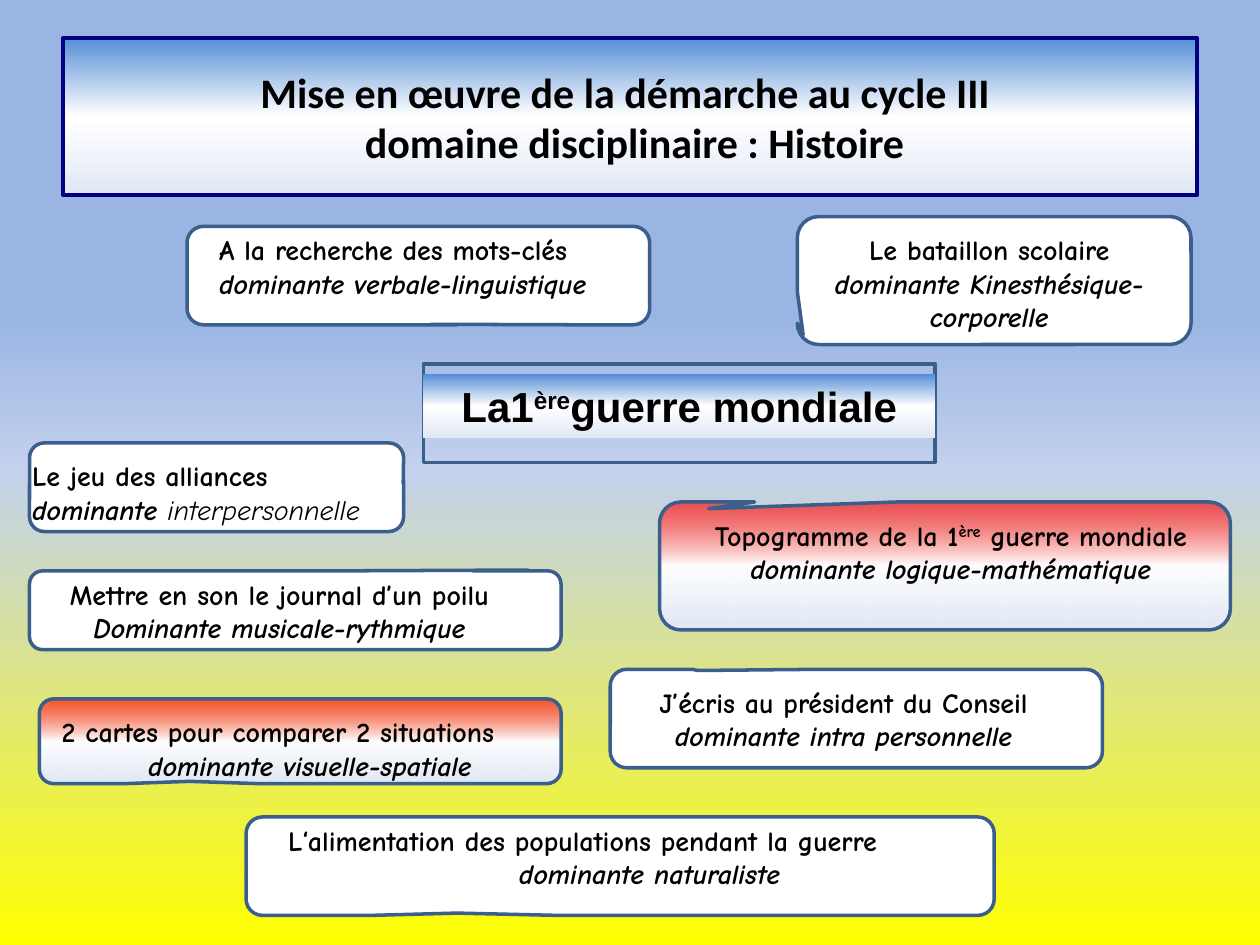
from lxml.etree import SubElement
from pptx import Presentation
from pptx.dml.color import RGBColor
from pptx.enum.shapes import MSO_SHAPE
from pptx.enum.text import MSO_ANCHOR, MSO_AUTO_SIZE, PP_ALIGN
from pptx.oxml.ns import qn
from pptx.util import Inches, Pt

THEME = {
    "ink": "000000", "paper": "FFFFFF", "outline": "3A5F8C", "title_outline": "000080",
    "sky": [(33, "9AB5E4", 100), (50, "C2D1ED", 100), (100, "FFFF00", 100)],
    "blue": [(0, "558ED5", 100), (50, "FFFFFF", 100), (100, "E1E8F5", 100)],
    "red": [(0, "FF0000", 62), (50, "FFFFFF", 100), (100, "E1E8F5", 100)],
    "title_font": "Calibri", "topic_font": "Arial", "activity_font": "Comic Neue",
    "heading_size": 24, "activity_size": 16,
}
ALIGN = {"l": PP_ALIGN.LEFT, "c": PP_ALIGN.CENTER}
ITALIC, LIGHT, SUPER = {"italic": True}, {"italic": True, "bold": False}, {"raised": True}


def shade(fill, owner, stops):
    """Give owner a top-to-bottom gradient of (percent, colour, opacity) stops."""
    fill.gradient()
    fill.gradient_angle = 270
    stop_list = owner.element.find(".//" + qn("a:gsLst"))
    for old_stop in list(stop_list):
        stop_list.remove(old_stop)
    for percent, colour, opacity in stops:
        stop = SubElement(stop_list, qn("a:gs"), pos=str(percent * 1000))
        tint = SubElement(stop, qn("a:srgbClr"), val=colour)
        if opacity < 100:
            SubElement(tint, qn("a:alpha"), val=str(opacity * 1000))


def write(frame, lines, *, font, size, aligns="c", wrap=True):
    """Fill frame with lines of (text, format) runs; aligns has a letter per line."""
    frame.word_wrap = wrap
    for index, line in enumerate(lines):
        paragraph = frame.add_paragraph() if index else frame.paragraphs[0]
        paragraph.alignment = ALIGN[aligns[min(index, len(aligns) - 1)]]
        for text, style in line:
            for part_index, part in enumerate(text.split("\n")):
                if part_index:
                    paragraph.add_line_break()
                run = paragraph.add_run()
                run.text = part
                run.font.name, run.font.size = font, Pt(size)
                run.font.bold = style.get("bold", True)
                run.font.italic = style.get("italic", False)
                run.font.color.rgb = RGBColor.from_string(THEME["ink"])
                if style.get("raised"):
                    run.font._element.set("baseline", "30000")


prs = Presentation()
prs.slide_width, prs.slide_height = Inches(10), Inches(7.5)
unit = prs.slide_width / 128  # the slide is a grid of 128 columns by 96 rows
slide = prs.slides.add_slide(prs.slide_layouts[5])
shade(slide.background.fill, slide, THEME["sky"])

# Title band
title = slide.shapes.title
title.left, title.top = int(prs.slide_width * 0.05), int(prs.slide_height * 0.04)
title.width, title.height = int(prs.slide_width * 0.9), int(prs.slide_height / 6)
shade(title.fill, title, THEME["blue"])
title.line.color.rgb = RGBColor.from_string(THEME["title_outline"])
title.line.width = Pt(2.25)
title.text_frame.vertical_anchor = MSO_ANCHOR.MIDDLE
write(title.text_frame, [[("Mise en œuvre de la démarche au cycle III \n domaine disciplinaire : Histoire", {})]],
      font=THEME["title_font"], size=THEME["heading_size"])

# Panels: grid cell, fill, callout tip (None for a plain rectangle)
panels = [
    ((3, 58, 54, 8), "paper", (0.438, -0.511)),
    ((43, 37, 52, 10), None, None),
    ((43, 38, 52, 6.5), "blue", None),
    ((19, 23, 47, 10), "paper", (0.027, 0.495)),
    ((81, 22, 40, 13), "paper", (-0.485, 0.425)),
    ((67, 51, 58, 13), "red", (-0.414, -0.448)),
    ((3, 45, 38, 9), "paper", (0.499, -0.04)),
    ((62, 68, 50, 10), "paper", (-0.322, -0.488)),
    ((4, 71, 53, 8.6), "red", (-0.212, 0.474)),
    ((25, 83, 76, 10), "paper", (-0.218, 0.477)),
]
for cell, fill_name, tip in panels:
    kind = MSO_SHAPE.ROUNDED_RECTANGULAR_CALLOUT if tip else MSO_SHAPE.RECTANGLE
    panel = slide.shapes.add_shape(kind, *(int(n * unit) for n in cell))
    panel.shadow.inherit = False
    if tip:
        panel.adjustments[0], panel.adjustments[1] = tip
    if fill_name is None:
        panel.fill.background()
    elif fill_name == "paper":
        panel.fill.solid()
        panel.fill.fore_color.rgb = RGBColor.from_string(THEME["paper"])
    else:
        shade(panel.fill, panel, THEME[fill_name])
    if fill_name == "blue":
        panel.line.fill.background()
        panel.text_frame.vertical_anchor = MSO_ANCHOR.TOP
        write(panel.text_frame, [[("La1", {}), ("ère", SUPER), ("guerre mondiale", {})]],
              font=THEME["topic_font"], size=THEME["heading_size"])
    else:
        panel.line.color.rgb = RGBColor.from_string(THEME["outline"])
        panel.line.width = Pt(2)

# Activities: grid cell, alignment of each line, wrapping, lines
activities = [
    ((21, 23, 44.5, 12), "l", True,
     [[("A la recherche des mots-clés", {})], [("dominante verbale-linguistique", ITALIC)]]),
    ((81, 23, 39, 11.6), "c", True,
     [[("Le bataillon scolaire", {})], [("dominante Kinesthésique-", ITALIC)], [("corporelle", ITALIC)]]),
    ((68, 52, 57.2, 8.2), "c", False,
     [[("Topogramme de la 1", {}), ("ère", SUPER), (" guerre mondiale", {})],
      [("dominante logique-mathématique", ITALIC)]]),
    ((3, 58, 50.8, 8.2), "c", False,
     [[("Mettre en son le journal d’un poilu", {})], [("Dominante musicale-rythmique", ITALIC)]]),
    ((63, 69, 45.4, 8.2), "c", False,
     [[("J’écris au président du Conseil", {})], [("dominante intra personnelle", ITALIC)]]),
    ((5, 72, 53, 8.2), "lc", True,
     [[("2 cartes pour comparer 2 situations", {})], [("dominante visuelle-spatiale", ITALIC)]]),
    ((28, 83, 76, 8.2), "lc", True,
     [[("L‘alimentation des populations pendant la guerre", {})], [("dominante naturaliste", ITALIC)]]),
    ((2, 46, 40, 8.2), "l", True,
     [[("Le jeu des alliances", {})], [("dominante ", ITALIC), ("interpersonnelle", LIGHT)]]),
]
for cell, aligns, wrap, lines in activities:
    activity = slide.shapes.add_textbox(*(int(n * unit) for n in cell))
    activity.text_frame.auto_size = MSO_AUTO_SIZE.SHAPE_TO_FIT_TEXT
    write(activity.text_frame, lines, font=THEME["activity_font"],
          size=THEME["activity_size"], aligns=aligns, wrap=wrap)

prs.save("out.pptx")
